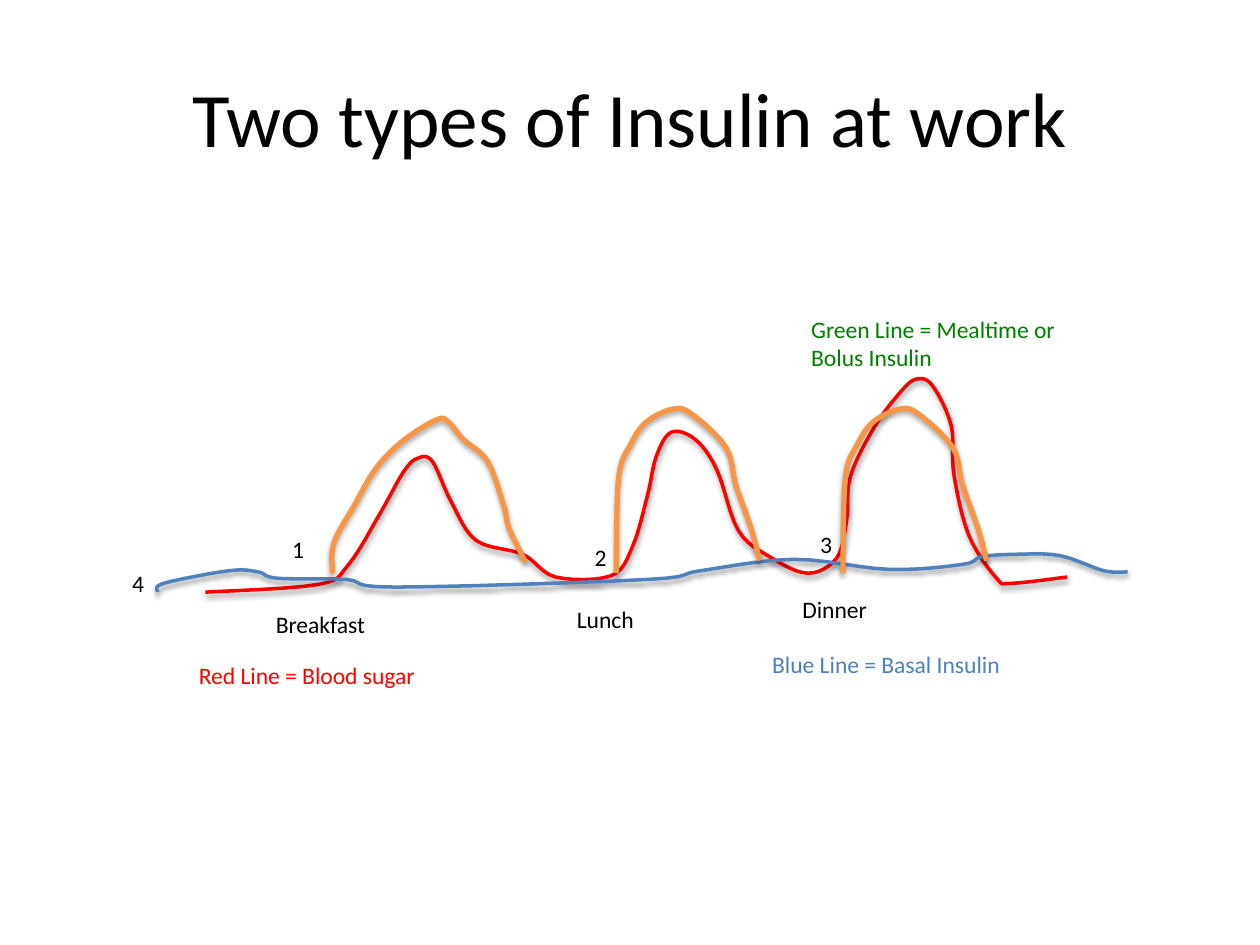
from lxml import etree
from pptx import Presentation
from pptx import util as u
from pptx.dml.color import RGBColor
from pptx.enum import text
from pptx.oxml import ns

# One grid unit is a hundredth of an inch; the slide has 1000 columns and 750 rows.
UNIT = u.Inches(0.01)
COLUMNS, ROWS = 1000, 750
FONT = "Calibri"
STEPS = 6  # line segments between two knots of a curve

BLACK = RGBColor(0x00, 0x00, 0x00)
RED = RGBColor(0xFF, 0x00, 0x00)
BLUE = RGBColor(0x4F, 0x81, 0xBD)
ORANGE = RGBColor(0xF7, 0x96, 0x46)
GREEN = RGBColor(0x00, 0x80, 0x00)

BLOOD_SUGAR = [
    (163, 470), (252, 464), (276, 449), (302, 407), (320, 375), (331, 364),
    (343, 366), (358, 398), (378, 429), (415, 440), (441, 458), (485, 457),
    (502, 434), (514, 393), (521, 362), (533, 343), (552, 349), (569, 373),
    (586, 421), (611, 442), (641, 455), (664, 443), (672, 413), (675, 378),
    (694, 339), (714, 312), (727, 301), (740, 306), (755, 338), (757, 376),
    (769, 425), (791, 459), (803, 463), (847, 458),
]
BASAL_INSULIN = [
    (125, 470), (130, 463), (182, 453), (205, 454), (220, 459), (275, 460),
    (314, 466), (513, 460), (556, 453), (630, 444), (706, 452), (764, 448),
    (779, 442), (806, 440), (841, 441), (876, 453), (895, 454),
]
BREAKFAST_BOLUS = [
    (264, 455), (265, 431), (282, 400), (299, 371), (321, 349), (347, 333),
    (356, 335), (368, 349), (387, 366), (400, 402), (404, 419), (417, 446),
]
LUNCH_BOLUS = [
    (489, 455), (491, 379), (501, 352), (513, 335), (533, 325), (548, 328),
    (576, 355), (584, 385), (596, 419), (603, 445),
]
LUNCH_TO_DINNER = 180
DINNER_BOLUS = [(x + LUNCH_TO_DINNER, y) for x, y in LUNCH_BOLUS]

LABEL_HEIGHT = 33
LABELS = [  # wording, left, top, width, colour
    ("Breakfast", 209, 479, 109, BLACK),
    ("Lunch", 448, 475, 83, BLACK),
    ("Dinner", 627, 467, 84, BLACK),
    ("Red Line = Blood sugar", 148, 520, 207, RED),
    ("Blue Line = Basal Insulin", 603, 511, 229, BLUE),
    ("Green Line = Mealtime or Bolus Insulin", 634, 245, 247, GREEN),
    ("1", 222, 420, 42, BLACK),
    ("2", 462, 426, 39, BLACK),
    ("3", 641, 416, 42, BLACK),
    ("4", 95, 447, 30, BLACK),
]


def style_paragraph(paragraph, size, color):
    paragraph.font.name = FONT
    paragraph.font.size = u.Pt(size)
    paragraph.font.color.rgb = color


def add_title(slide, wording):
    title = slide.shapes.title
    title.left, title.top = 50 * UNIT, 30 * UNIT
    title.width, title.height = 900 * UNIT, 125 * UNIT
    frame = title.text_frame
    frame.text = wording
    frame.vertical_anchor = text.MSO_ANCHOR.MIDDLE
    paragraph = frame.paragraphs[0]
    paragraph.alignment = text.PP_ALIGN.CENTER
    style_paragraph(paragraph, 44, BLACK)


def add_shadow(shape, distance, opacity):
    """Give the shape a soft shadow straight below it (points, percent)."""
    shape.shadow.inherit = False
    effects = shape._element.spPr.find(ns.qn("a:effectLst"))
    shadow = etree.SubElement(
        effects, ns.qn("a:outerShdw"), blurRad=str(u.Pt(3.1)),
        dist=str(u.Pt(distance)), dir="5400000", rotWithShape="0")
    color = etree.SubElement(shadow, ns.qn("a:srgbClr"), val=str(BLACK))
    etree.SubElement(color, ns.qn("a:alpha"), val=str(opacity * 1000))


def spline(before, start, end, after, t):
    """Catmull-Rom value between start and end, at share t of the way."""
    slope = end - before
    bend = 2 * before - 5 * start + 4 * end - after
    twist = 3 * (start - end) + after - before
    return start + t * (slope + t * (bend + t * twist)) / 2


def smooth_points(knots):
    padded = [knots[0], *knots, knots[-1]]
    points = [
        tuple(spline(*values, step / STEPS) for values in zip(*window))
        for window in zip(padded, padded[1:], padded[2:], padded[3:])
        for step in range(STEPS)
    ]
    return points + [knots[-1]]


def add_curve(slide, knots, color, width, shadow_distance, shadow_opacity):
    fineness = 100  # keeps fractions of a grid unit when points are rounded
    points = [(x * fineness, y * fineness) for x, y in smooth_points(knots)]
    builder = slide.shapes.build_freeform(*points[0], scale=UNIT / fineness)
    builder.add_line_segments(points[1:], close=False)
    curve = builder.convert_to_shape()
    curve.fill.background()
    curve.line.color.rgb = color
    curve.line.width = u.Pt(width)
    add_shadow(curve, shadow_distance, shadow_opacity)


def add_label(slide, wording, left, top, width, color):
    box = slide.shapes.add_textbox(
        left * UNIT, top * UNIT, width * UNIT, LABEL_HEIGHT * UNIT)
    frame = box.text_frame
    frame.word_wrap = True
    frame.auto_size = text.MSO_AUTO_SIZE.SHAPE_TO_FIT_TEXT
    frame.text = wording
    style_paragraph(frame.paragraphs[0], 13.5, color)


def main():
    presentation = Presentation()
    presentation.slide_width = COLUMNS * UNIT
    presentation.slide_height = ROWS * UNIT
    slide = presentation.slides.add_slide(presentation.slide_layouts[5])
    add_title(slide, "Two types of Insulin at work")
    for knots, color in ((BLOOD_SUGAR, RED), (BASAL_INSULIN, BLUE)):
        add_curve(slide, knots, color, 2, 1.6, 38)
    for knots in (BREAKFAST_BOLUS, LUNCH_BOLUS, DINNER_BOLUS):
        add_curve(slide, knots, ORANGE, 3, 1.8, 35)
    for label in LABELS:
        add_label(slide, *label)
    presentation.save("out.pptx")


if __name__ == "__main__":
    main()
